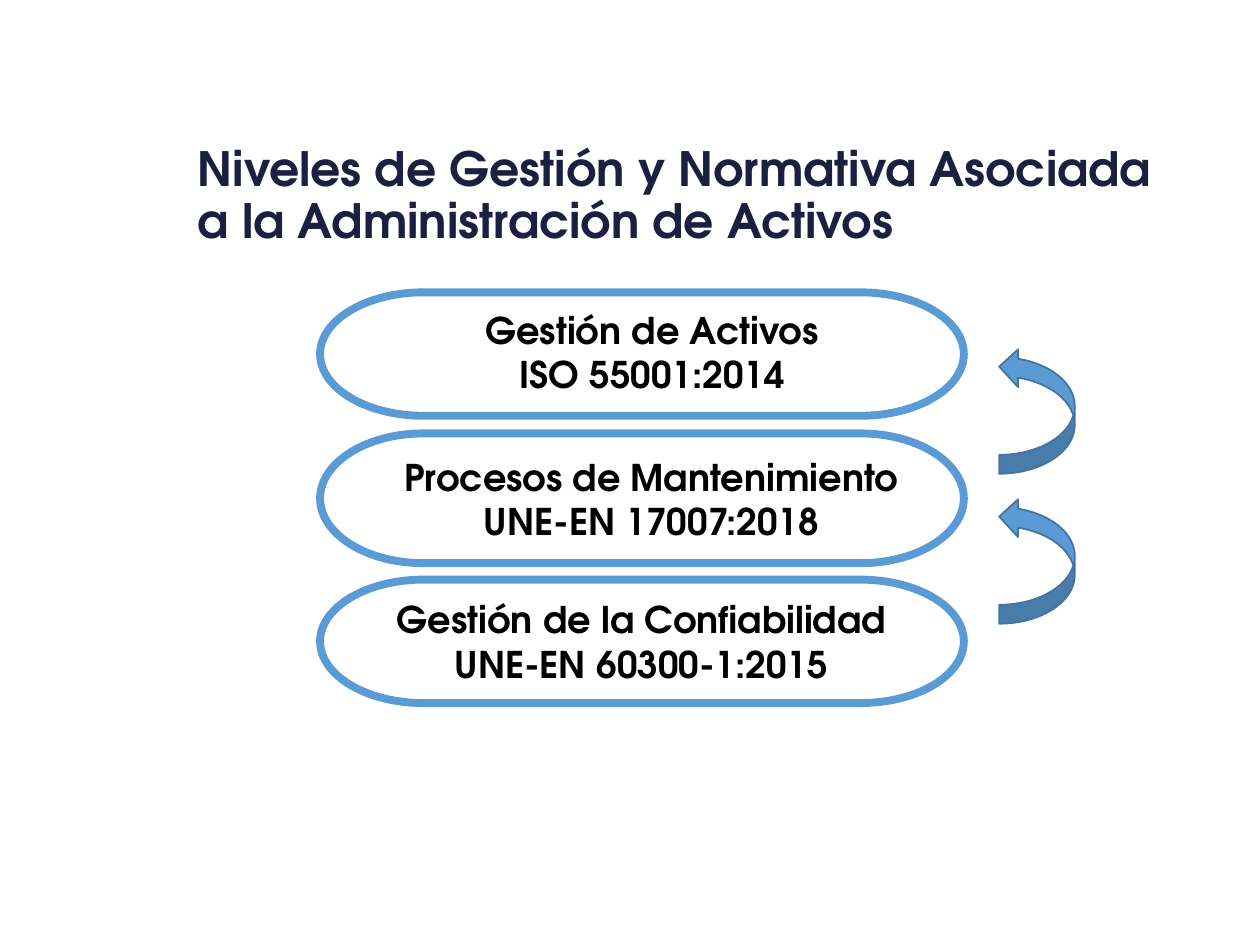
from pptx import Presentation
from pptx import util as u
from pptx.dml.color import RGBColor
from pptx.enum import shapes, text

LEVELS = [
    # (top, height) of the outline, (left, top, width) of the label, lines
    ((2.32, 0.98), (3.48, 2.39, 3.39), ("Gestión de Activos", "ISO 55001:2014")),
    ((3.44, 1.03), (2.96, 3.56, 4.42), ("Procesos de Mantenimiento", "UNE-EN 17007:2018")),
    ((4.6, 0.98), (2.86, 4.69, 4.46), ("Gestión de la Confiabilidad", "UNE-EN 60300-1:2015")),
]
LEVEL_LEFT, LEVEL_WIDTH = 2.54, 5.11
LABEL_HEIGHT = 0.81
ARROW_TOPS = (3.95, 2.76)


def color(hex_value):
    return RGBColor.from_string(hex_value)


def inches(*lengths):
    return [u.Inches(length) for length in lengths]


def apply(target, values):
    for name, value in values.items():
        setattr(target, name, value)


class LevelSlide:
    FONT = {"name": "TeX Gyre Adventor", "bold": True}
    NAVY, BLACK, BLUE, DARK_BLUE = "1C2040", "000000", "5B9BD5", "43739E"

    def __init__(self, deck):
        self.slide = deck.slides.add_slide(deck.slide_layouts[5])

    def style(self, paragraph, size, ink, **layout):
        apply(paragraph, layout)
        apply(paragraph.font, {**self.FONT, "size": u.Pt(size)})
        paragraph.font.color.rgb = color(ink)

    def title(self, wording, box):
        heading = self.slide.shapes.title
        apply(heading, dict(zip(("left", "top", "width", "height"), inches(*box))))
        frame = heading.text_frame
        frame.text = wording
        side, edge = inches(0.07, 0.04)
        apply(frame, {
            "word_wrap": True,
            "auto_size": text.MSO_AUTO_SIZE.NONE,
            "vertical_anchor": text.MSO_ANCHOR.MIDDLE,
            "margin_left": side, "margin_right": side,
            "margin_top": edge, "margin_bottom": edge,
        })
        self.style(frame.paragraphs[0], 27, self.NAVY,
                   alignment=text.PP_ALIGN.LEFT, line_spacing=0.9)

    def preset(self, kind, box, line, line_width, fill=None):
        figure = self.slide.shapes.add_shape(kind, *inches(*box))
        figure.shadow.inherit = False
        if fill:
            figure.fill.solid()
            figure.fill.fore_color.rgb = color(fill)
        else:
            figure.fill.background()
        figure.line.color.rgb = color(line)
        figure.line.width = u.Pt(line_width)
        return figure

    def level(self, top, height):
        self.preset(shapes.MSO_SHAPE.FLOWCHART_TERMINATOR,
                    (LEVEL_LEFT, top, LEVEL_WIDTH, height), self.BLUE, 4.5)

    def label(self, lines, box):
        frame = self.slide.shapes.add_textbox(*inches(*box)).text_frame
        frame.text = "\n".join(lines)
        apply(frame, {"word_wrap": True,
                      "auto_size": text.MSO_AUTO_SIZE.SHAPE_TO_FIT_TEXT})
        for paragraph in frame.paragraphs:
            self.style(paragraph, 21, self.BLACK, alignment=text.PP_ALIGN.CENTER)

    def upward_arrow(self, top):
        arrow = self.preset(shapes.MSO_SHAPE.CURVED_RIGHT_ARROW,
                            (7.93, top, 0.6, 1), self.DARK_BLUE, 1, self.BLUE)
        arrow.rotation = 180


def main():
    deck = Presentation()
    deck.slide_width, deck.slide_height = inches(10, 7.5)
    page = LevelSlide(deck)
    page.title("Niveles de Gestión y Normativa Asociada a la Administración de Activos",
               (1.5, 1.17, 7.84, 0.79))
    for outline, label_box, lines in LEVELS:
        page.level(*outline)
        page.label(lines, (*label_box, LABEL_HEIGHT))
    for top in ARROW_TOPS:
        page.upward_arrow(top)
    deck.save("out.pptx")


if __name__ == "__main__":
    main()
